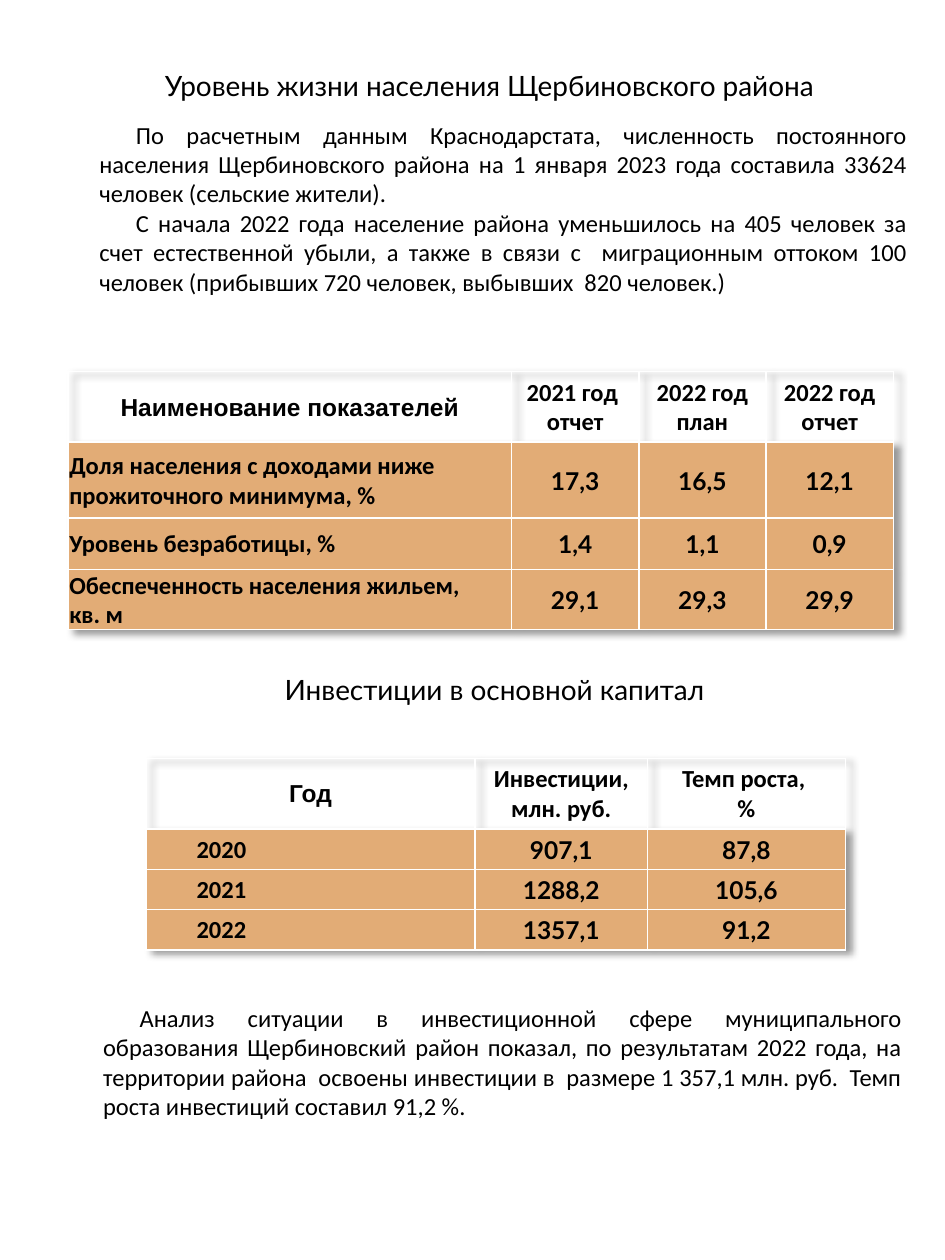
from dataclasses import dataclass

from lxml import etree
from pptx import Presentation
from pptx.dml.color import RGBColor
from pptx.enum.text import MSO_ANCHOR, MSO_AUTO_SIZE, PP_ALIGN
from pptx.oxml.ns import qn
from pptx.util import Emu, Pt

PX = 9144  # 100 px to the inch
LEFT, CENTER, JUSTIFY = PP_ALIGN.LEFT, PP_ALIGN.CENTER, PP_ALIGN.JUSTIFY
MIDDLE = MSO_ANCHOR.MIDDLE
TOP = MSO_ANCHOR.TOP
GROW = MSO_AUTO_SIZE.SHAPE_TO_FIT_TEXT
BLACK, WHITE, SAND = "000000", "FFFFFF", "E2AC76"


@dataclass
class TextBlock:
    box: tuple[int, int, int, int]
    paragraphs: list[str]
    heading: bool = False


@dataclass
class TableBlock:
    box: tuple[int, int, int, int]
    cols: list[int]
    heights: list[int]
    rows: list[list[str]]
    label_margin: int = 0


def px(n: int) -> Emu:
    return Emu(n * PX)


def color(value: str) -> RGBColor:
    return RGBColor.from_string(value)


def write(p, text: str, align, font: str, size: int, bold: bool = False,
          margin: int = 0, indent: int = 0) -> None:
    p.text = text
    for key, value in {"alignment": align, "space_before": Pt(0)}.items():
        setattr(p, key, value)
    pPr = p._p.get_or_add_pPr()
    pPr.set("marL", str(px(margin)))
    pPr.set("indent", str(px(indent)))
    for r in p.runs:
        for key, value in {"name": font, "size": Pt(size), "bold": bold}.items():
            setattr(r.font, key, value)
        r.font.color.rgb = color(BLACK)


def fill_text(s, block: TextBlock) -> None:
    for key, n in zip(("left", "top", "width", "height"), block.box):
        setattr(s, key, px(n))
    tf = s.text_frame
    for key, value in {"word_wrap": True, "auto_size": GROW,
                       "vertical_anchor": TOP}.items():
        setattr(tf, key, value)
    for i, text in enumerate(block.paragraphs):
        p = tf.add_paragraph() if i else tf.paragraphs[0]
        if block.heading:
            write(p, text, CENTER, "Lato", 16)
        else:
            write(p, text, JUSTIFY, "Calibri", 14, indent=29)


def add_text(slide, block: TextBlock) -> None:
    fill_text(slide.shapes.add_textbox(*map(px, block.box)), block)


def add_color(parent, value: str):
    return etree.SubElement(parent, qn("a:srgbClr"), val=value)


def add_borders(cell) -> None:
    tcPr = cell._tc.get_or_add_tcPr()
    for i, side in enumerate("LRTB"):
        ln = etree.Element(qn(f"a:ln{side}"), w=str(Pt(1)))
        add_color(etree.SubElement(ln, qn("a:solidFill")), WHITE)
        tcPr.insert(i, ln)


def add_shadow(table) -> None:
    effects = etree.Element(qn("a:effectLst"))
    shadow = etree.SubElement(effects, qn("a:outerShdw"), blurRad=str(Pt(4)),
                              dist=str(Pt(4)), dir="1800000", algn="tl",
                              rotWithShape="0")
    etree.SubElement(add_color(shadow, BLACK), qn("a:alpha"), val="40000")
    table._tbl.tblPr.insert(0, effects)


def add_data_table(slide, block: TableBlock) -> None:
    shape = slide.shapes.add_table(len(block.rows), len(block.cols),
                                   *map(px, block.box))
    table = shape.table
    table.horz_banding = False
    add_shadow(table)
    for col, width in zip(table.columns, block.cols):
        col.width = px(width)
    for row, height in zip(table.rows, block.heights):
        row.height = px(height)
    for i, texts in enumerate(block.rows):
        for j, text in enumerate(texts):
            cell = table.cell(i, j)
            for key, value in {"margin_left": px(1), "margin_right": px(1),
                               "margin_top": px(1), "margin_bottom": 0,
                               "vertical_anchor": MIDDLE}.items():
                setattr(cell, key, value)
            if i:
                cell.fill.solid()
                cell.fill.fore_color.rgb = color(SAND)
            else:
                cell.fill.background()
            add_borders(cell)
            # Headers, row labels and figures each have their own font
            label = i > 0 and j == 0
            if i == 0:
                font = "Calibri" if j else "Arial"
            else:
                font = "Lato" if j else "Calibri"
            write(cell.text_frame.paragraphs[0], text,
                  LEFT if label else CENTER, font, 14, True,
                  margin=block.label_margin if label else 0)


TITLE = TextBlock((58, 49, 661, 37),
                  ["Уровень жизни населения Щербиновского района"], True)
POPULATION = TextBlock((69, 90, 661, 152), [
    "По расчетным данным Краснодарстата, численность постоянного населения "
    "Щербиновского района на 1 января 2023 года составила 33624 человек "
    "(сельские жители).",
    "С начала 2022 года население района уменьшилось на 405 человек за счет "
    "естественной убыли, а также в связи с  миграционным оттоком 100 человек "
    "(прибывших 720 человек, выбывших  820 человек.)",
])
LIVING = TableBlock((54, 295, 656, 204), [352, 101, 101, 101], [56, 60, 41, 41], [
    ["Наименование показателей", "2021 год \nотчет", "2022 год\nплан",
     "2022 год\nотчет"],
    ["Доля населения с доходами ниже прожиточного минимума, %",
     "17,3", "16,5", "12,1"],
    ["Уровень безработицы, %", "1,4", "1,1", "0,9"],
    ["Обеспеченность населения жильем, \nкв. м", "29,1", "29,3", "29,9"],
])
INVEST_TITLE = TextBlock((62, 529, 661, 37), ["Инвестиции в основной капитал"], True)
INVEST = TableBlock((116, 602, 555, 152), [261, 137, 157], [56, 32, 32, 32], [
    ["Год", "Инвестиции, млн. руб.", "Темп роста, \n%"],
    ["2020", "907,1", "87,8"],
    ["2021", "1288,2", "105,6"],
    ["2022", "1357,1", "91,2"],
], label_margin=39)
ANALYSIS = TextBlock((72, 791, 654, 104), [
    "Анализ ситуации в инвестиционной сфере муниципального образования "
    "Щербиновский район показал, по результатам 2022 года, на территории "
    "района  освоены инвестиции в  размере 1 357,1 млн. руб.  Темп роста "
    "инвестиций составил 91,2 %.",
])


def main() -> None:
    prs = Presentation()
    prs.slide_width, prs.slide_height = px(750), px(1000)
    slide = prs.slides.add_slide(prs.slide_layouts[5])  # title only

    # Living standards
    fill_text(slide.shapes.title, TITLE)
    add_text(slide, POPULATION)
    add_data_table(slide, LIVING)

    # Investment
    add_text(slide, INVEST_TITLE)
    add_data_table(slide, INVEST)
    add_text(slide, ANALYSIS)

    prs.save("out.pptx")


if __name__ == "__main__":
    main()
